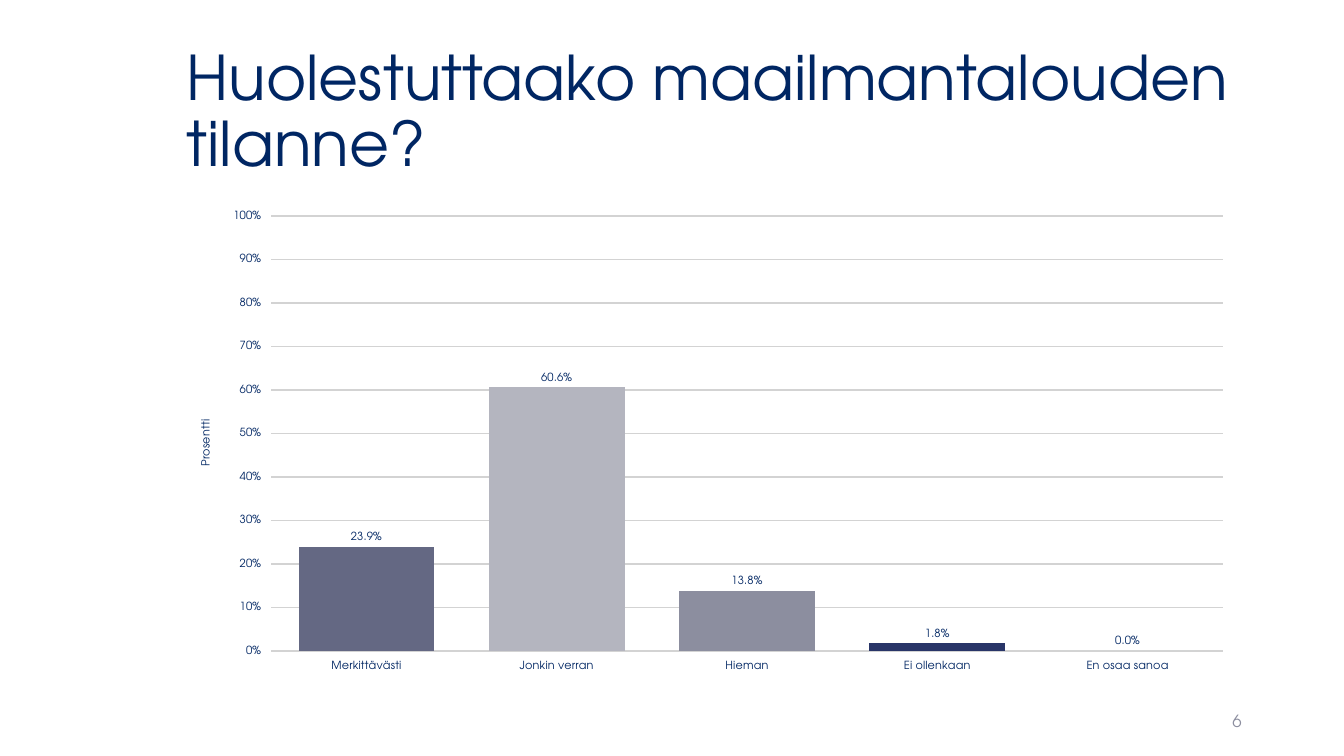
import dataclasses
import typing

import lxml.etree
import pptx
import pptx.chart.data
import pptx.dml.color
import pptx.enum.chart
import pptx.enum.text
import pptx.oxml.ns
import pptx.util


@dataclasses.dataclass(frozen=True)
class Theme:
    font: str = "TeX Gyre Adventor"
    ink: str = "002663"
    muted: str = "8C8E9F"
    grid: str = "D3D3D3"
    title: int = 44
    number: int = 12
    chart: int = 18
    label: int = 8


class Box(typing.NamedTuple):
    """Place on a grid of 160 columns by 90 rows."""
    col: float
    row: float
    cols: float
    rows: float


class Answer(typing.NamedTuple):
    name: str
    share: float
    color: str


THEME = Theme()
WIDTH, HEIGHT = pptx.util.Inches(13.33), pptx.util.Inches(7.5)
COLUMNS, ROWS = 160, 90
TITLE_BOX = Box(21, 4.8, 127, 17.4)
CHART_BOX = Box(21, 24, 127, 57.1)
NUMBER_BOX = Box(113, 83.4, 36, 4.8)

ANSWERS = [
    Answer("Merkittävästi", 0.239, "646883"),
    Answer("Jonkin verran", 0.606, "B4B5BF"),
    Answer("Hieman", 0.138, THEME.muted),
    Answer("Ei ollenkaan", 0.018, "293568"),
    Answer("En osaa sanoa", 0, "DADBDF"),
]


def rgb(color: str) -> pptx.dml.color.RGBColor:
    return pptx.dml.color.RGBColor.from_string(color)


def apply(target: typing.Any, formats: dict[str, typing.Any]) -> None:
    for name, value in formats.items():
        setattr(target, name, value)


def place(box: Box) -> dict[str, int]:
    return {
        "left": round(WIDTH * box.col / COLUMNS),
        "top": round(HEIGHT * box.row / ROWS),
        "width": round(WIDTH * box.cols / COLUMNS),
        "height": round(HEIGHT * box.rows / ROWS),
    }


def style_font(font: typing.Any, size: int, color: str = THEME.ink) -> None:
    apply(font, {"name": THEME.font, "size": pptx.util.Pt(size), "bold": False})
    font.color.rgb = rgb(color)


def write(sp: typing.Any, text: str, size: int, color: str,
          formats: dict[str, typing.Any]) -> None:
    tf = sp.text_frame
    apply(tf, {"word_wrap": True,
               "auto_size": pptx.enum.text.MSO_AUTO_SIZE.NONE,
               "vertical_anchor": pptx.enum.text.MSO_ANCHOR.MIDDLE})
    p = tf.paragraphs[0]
    apply(p, formats)
    r = p.add_run()
    r.text = text
    style_font(r.font, size, color)


def set_layout(parent: typing.Any, index: int, shares: dict[str, float],
               inner: bool = False) -> None:
    """Fix the place of a chart part, in shares of the chart."""
    qn = pptx.oxml.ns.qn
    for old in parent.findall(qn("c:layout")):
        parent.remove(old)
    layout = lxml.etree.Element(qn("c:layout"))
    manual = lxml.etree.SubElement(layout, qn("c:manualLayout"))
    values: dict[str, typing.Any] = {"layoutTarget": "inner"} if inner else {}
    values |= {"xMode": "edge", "yMode": "edge"} | shares
    for name, value in values.items():
        lxml.etree.SubElement(manual, qn(f"c:{name}"), val=str(value))
    parent.insert(index, layout)


def add_answers_chart(s: typing.Any) -> None:
    data = pptx.chart.data.CategoryChartData()
    data.categories = [a.name for a in ANSWERS]
    data.add_series("Series 1", [a.share for a in ANSWERS])
    box = place(CHART_BOX)
    chart = s.shapes.add_chart(
        pptx.enum.chart.XL_CHART_TYPE.COLUMN_CLUSTERED,
        box["left"], box["top"], box["width"], box["height"], data).chart
    apply(chart, {"has_legend": False, "has_title": False})
    style_font(chart.font, THEME.chart)

    # Columns and their labels
    plot = chart.plots[0]
    apply(plot, {"gap_width": 40, "overlap": -2, "vary_by_categories": False,
                 "has_data_labels": True})
    apply(plot.data_labels, {
        "show_value": True, "number_format": "0.0%",
        "number_format_is_linked": False,
        "position": pptx.enum.chart.XL_LABEL_POSITION.OUTSIDE_END})
    style_font(plot.data_labels.font, THEME.label)
    for i, answer in enumerate(ANSWERS):
        fill = plot.series[0].points[i].format.fill
        fill.solid()
        fill.fore_color.rgb = rgb(answer.color)

    # Axes
    for axis in (chart.category_axis, chart.value_axis):
        axis.major_tick_mark = pptx.enum.chart.XL_TICK_MARK.OUTSIDE
        axis.format.line.fill.background()
        style_font(axis.tick_labels.font, THEME.label)
    axis = chart.value_axis
    apply(axis, {"minimum_scale": 0, "maximum_scale": 1, "major_unit": 0.1,
                 "has_major_gridlines": True, "has_title": True})
    apply(axis.tick_labels, {"number_format": "0%",
                             "number_format_is_linked": False})
    line = axis.major_gridlines.format.line
    line.width = pptx.util.Pt(1)
    line.color.rgb = rgb(THEME.grid)
    tf = axis.axis_title.text_frame
    r = tf.paragraphs[0].add_run()
    r.text = "Prosentti"
    style_font(r.font, THEME.label)
    tf._txBody.bodyPr.set("rot", "-5400000")
    tf._txBody.bodyPr.set("vert", "horz")

    # Places inside the chart
    set_layout(axis.axis_title._element, 1, {"x": 0.02, "y": 0.45})
    set_layout(chart._chartSpace.chart.plotArea, 0,
               {"x": 0.089, "y": 0.03, "w": 0.892, "h": 0.907}, inner=True)


def main() -> None:
    prs = pptx.Presentation()
    apply(prs, {"slide_width": WIDTH, "slide_height": HEIGHT})
    s = prs.slides.add_slide(prs.slide_layouts[5])

    # Title
    sp = s.shapes.title
    apply(sp, place(TITLE_BOX))
    write(sp, "Huolestuttaako maailmantalouden tilanne?", THEME.title, THEME.ink,
          {"alignment": pptx.enum.text.PP_ALIGN.LEFT, "line_spacing": 0.9})

    # Slide number
    sp = s.shapes.add_textbox(**place(NUMBER_BOX))
    write(sp, "6", THEME.number, THEME.muted,
          {"alignment": pptx.enum.text.PP_ALIGN.RIGHT,
           "space_after": pptx.util.Pt(6)})

    # Chart
    add_answers_chart(s)
    prs.save("out.pptx")


if __name__ == "__main__":
    main()
